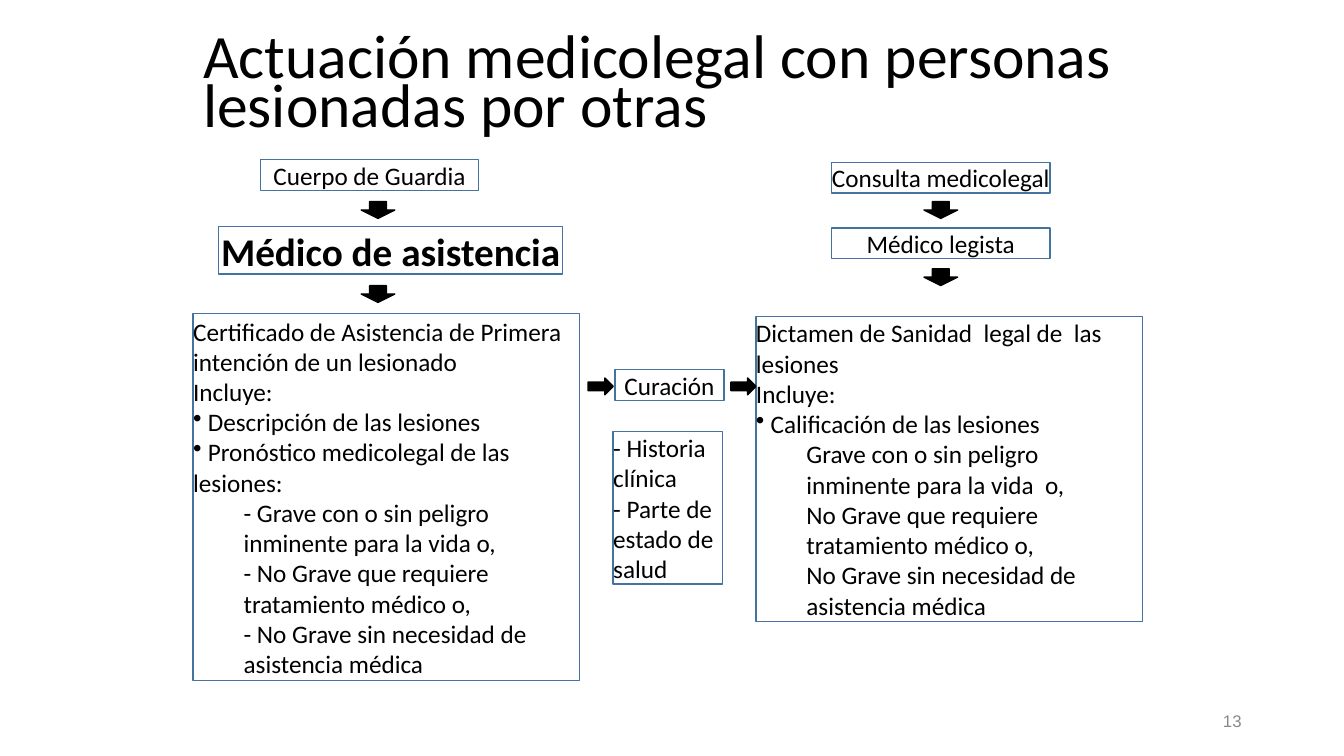
from lxml.etree import SubElement
from pptx import Presentation
from pptx.dml.color import RGBColor
from pptx.enum.shapes import MSO_SHAPE as Shape
from pptx.enum.text import MSO_ANCHOR as Anchor, PP_ALIGN as Align
from pptx.oxml.ns import qn
from pptx.util import Inches, Pt

COLUMNS, ROWS = 160, 90
UNIT = Inches(1) / 12
BLACK, WHITE, GREY, BLUE = "000000", "FFFFFF", "898989", "43739E"
LABEL_HEIGHT = 3.65
PANEL_WIDTH = 46

CERTIFICATE = [
    "Certificado de Asistencia de Primera intención de un lesionado",
    "Incluye:",
    ("bullet", " Descripción de las lesiones"),
    ("bullet", " Pronóstico medicolegal de las lesiones:"),
    ("indent", "- Grave con o sin peligro inminente para la vida o,"),
    ("indent", "- No Grave que requiere tratamiento médico o,"),
    ("indent", "- No Grave sin necesidad de asistencia médica"),
]
REPORT = [
    "Dictamen de Sanidad  legal de  las lesiones",
    "Incluye:",
    ("bullet", " Calificación de las lesiones"),
    ("indent", "Grave con o sin peligro inminente para la vida  o,"),
    ("indent", "No Grave que requiere tratamiento médico o,"),
    ("indent", "No Grave sin necesidad de asistencia médica"),
]
RECORDS = ["- Historia clínica", "- Parte de estado de salud"]


def color(value):
    return RGBColor.from_string(value)


def grid(*lengths):
    return [round(length * UNIT) for length in lengths]


def style_paragraph(paragraph, style):
    properties = paragraph._p.get_or_add_pPr()
    if style == "bullet":
        SubElement(properties, qn("a:buChar")).set("char", "•")
    elif style == "indent":
        paragraph.level = 1
        properties.set("marL", str(Inches(0.5)))
        properties.set("indent", "0")


def write(shape, lines, size=18, font="Calibri", fill=BLACK, bold=False,
          align=Align.LEFT, spacing=None, margin=None, wrap=True):
    frame = shape.text_frame
    frame.word_wrap = wrap
    frame.vertical_anchor = Anchor.MIDDLE
    if margin is not None:
        frame.margin_left = frame.margin_right = margin
        frame.margin_top = frame.margin_bottom = margin
    for index, line in enumerate(lines):
        style, text = line if isinstance(line, tuple) else ("plain", line)
        paragraph = frame.add_paragraph() if index else frame.paragraphs[0]
        paragraph.alignment = align
        if spacing:
            paragraph.line_spacing = Pt(spacing)
        style_paragraph(paragraph, style)
        run = paragraph.add_run()
        run.text = text
        run.font.name = font
        run.font.size = Pt(size)
        run.font.bold = bold
        run.font.color.rgb = color(fill)


def add_text(slide, area, text, **format):
    write(slide.shapes.add_textbox(*grid(*area)), [text], **format)


def add_figure(slide, kind, area, fill, line):
    shape = slide.shapes.add_shape(kind, *grid(*area))
    shape.shadow.inherit = False
    shape.fill.solid()
    shape.fill.fore_color.rgb = color(fill)
    shape.line.color.rgb = color(line)
    shape.line.width = Pt(1)
    return shape


def add_panel(slide, area, lines, **format):
    panel = add_figure(slide, Shape.RECTANGLE, area, WHITE, BLUE)
    write(panel, lines, margin=0, **format)


def add_label(slide, left, top, width, text, height=LABEL_HEIGHT, **format):
    add_panel(slide, (left, top, width, height), [text],
              align=Align.CENTER, wrap=False, **format)


def add_arrow(slide, kind, left, top):
    width = 4 if kind == Shape.DOWN_ARROW else 3
    add_figure(slide, kind, (left, top, width, 2), BLACK, BLACK)


def main():
    presentation = Presentation()
    presentation.slide_width, presentation.slide_height = grid(COLUMNS, ROWS)
    slide = presentation.slides.add_slide(presentation.slide_layouts[6])

    add_text(slide, (23, 3.6, 117, 14.4),
             "Actuación medicolegal con personas lesionadas por otras",
             size=44, spacing=35)
    add_text(slide, (113, 83.4, 36, 4.8), "13",
             size=12, font="Arial", fill=GREY, align=Align.RIGHT)

    add_panel(slide, (23, 37.35, PANEL_WIDTH, 43.7), CERTIFICATE)
    add_label(slide, 26, 27, 41, "Médico de asistencia",
              height=5.65, size=28, bold=True)
    add_label(slide, 31, 19, 26, "Cuerpo de Guardia")
    add_label(slide, 73.2, 44, 13, "Curación")
    add_panel(slide, (90, 37.65, PANEL_WIDTH, 36.35), REPORT)
    add_label(slide, 99, 27.15, 26, "Médico legista")
    add_label(slide, 99, 19.35, 26, "Consulta medicolegal")
    add_panel(slide, (73, 51.4, 13, 18.15), RECORDS)

    for left in (70, 87):
        add_arrow(slide, Shape.RIGHT_ARROW, left, 45)
    for left, top in ((43, 34), (43, 24), (110, 24), (110, 32)):
        add_arrow(slide, Shape.DOWN_ARROW, left, top)

    presentation.save("out.pptx")


if __name__ == "__main__":
    main()
